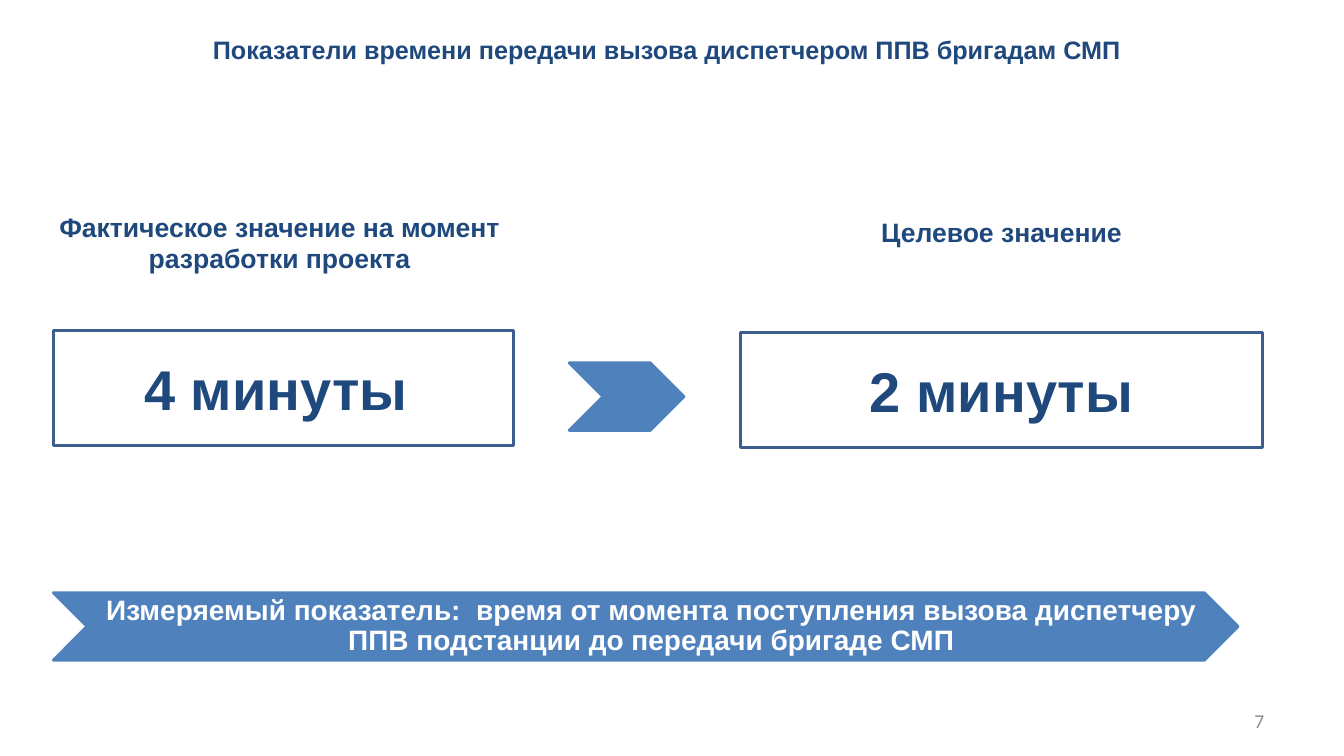
from pptx import Presentation, util as u
from pptx.dml.color import RGBColor
from pptx.enum import shapes, text

WIDTH, HEIGHT = u.Inches(13.34), u.Inches(7.5)
NAVY, BLUE, EDGE, WHITE, GREY = "1F497D", "4F81BD", "3A5F8C", "FFFFFF", "8C8C8C"
LABEL_HEIGHT, VALUE_HEIGHT = 17.73, 15.2


def color(code):
    """Turn a hex string into a colour."""
    return RGBColor.from_string(code)


def place(box):
    """Turn percentages of the slide into lengths."""
    left, top, width, height = box
    return [int(share * side / 100) for share, side in
            ((left, WIDTH), (top, HEIGHT), (width, WIDTH), (height, HEIGHT))]


def write(shape, words, size, code=NAVY, anchor=text.MSO_ANCHOR.MIDDLE,
          align=text.PP_ALIGN.CENTER, name="Arial", bold=True, spacing=1.0,
          margins=(0.1, 0.05, 0.1, 0.05)):
    """Fill a shape with one formatted paragraph."""
    frame = shape.text_frame
    sides = ("margin_left", "margin_top", "margin_right", "margin_bottom")
    settings = dict(zip(sides, map(u.Inches, margins)), word_wrap=True,
                    auto_size=text.MSO_AUTO_SIZE.NONE, vertical_anchor=anchor)
    para = frame.paragraphs[0]
    span = para.add_run()
    span.text = words
    span.font.color.rgb = color(code)
    formats = ((frame, settings),
               (para, {"alignment": align, "line_spacing": spacing}),
               (span.font, {"name": name, "size": u.Pt(size), "bold": bold}))
    for target, values in formats:
        for key, value in values.items():
            setattr(target, key, value)


def draw(page, kind, box, fill, line):
    """Draw a filled and outlined preset shape."""
    shape = page.shapes.add_shape(kind, *place(box))
    shape.shadow.inherit = False
    shape.fill.solid()
    shape.fill.fore_color.rgb = color(fill)
    shape.line.color.rgb = color(line)
    shape.line.width = u.Pt(2)
    return shape


def add_title(page, box, words):
    """Place the slide title."""
    title = page.shapes.title
    title.left, title.top, title.width, title.height = place(box)
    write(title, words, 18, anchor=text.MSO_ANCHOR.TOP)


def add_panel(page, box, label, value, bleed=0):
    """Place a label at the top of the box and a framed value at its bottom."""
    left, top, width, height = box
    caption = page.shapes.add_textbox(
        *place((left - bleed, top, width + bleed, LABEL_HEIGHT)))
    write(caption, label, 19)
    value_box = (left, top + height - VALUE_HEIGHT, width, VALUE_HEIGHT)
    frame = draw(page, shapes.MSO_SHAPE.RECTANGLE, value_box, WHITE, EDGE)
    write(frame, value, 40)


def add_chevron(page, box):
    """Draw a blue chevron."""
    draw(page, shapes.MSO_SHAPE.CHEVRON, box, BLUE, BLUE)


def add_banner(page, box, words):
    """Draw a wide chevron with text inset on every side."""
    add_chevron(page, box)
    left, top, width, height = box
    across, down = 2.25, 0.93
    inner = (left + across, top + down, width - 2 * across, height - 2 * down)
    write(page.shapes.add_textbox(*place(inner)), words, 20, WHITE,
          spacing=0.9, margins=(0.17, 0.06, 0.06, 0.06))


def add_page_number(page, box, number):
    """Place the page number."""
    write(page.shapes.add_textbox(*place(box)), number, 14, GREY,
          align=text.PP_ALIGN.RIGHT, name="Calibri", bold=False,
          margins=(0.12, 0.06, 0.12, 0.06))


def main():
    """Build the slide and save the deck."""
    deck = Presentation()
    deck.slide_width, deck.slide_height = WIDTH, HEIGHT
    page = deck.slides.add_slide(deck.slide_layouts[5])
    add_title(page, (14.09, 3.87, 71.06, 5.33),
              "Показатели времени передачи вызова диспетчером ППВ бригадам СМП")
    add_panel(page, (3.97, 23.2, 34.26, 35.73),
              "Фактическое значение на момент разработки проекта", "4 минуты ", bleed=0.6)
    add_chevron(page, (42.35, 48, 8.55, 8.93))
    add_panel(page, (55.1, 21.87, 38.83, 37.33), "Целевое значение", "2 минуты")
    add_banner(page, (3.97, 78.4, 88.16, 8.93),
               "Измеряемый показатель:  время от момента поступления вызова "
               "диспетчеру ППВ подстанции до передачи бригаде СМП")
    add_page_number(page, (71.66, 92.67, 23.31, 5.33), "7")
    deck.save("out.pptx")


if __name__ == "__main__":
    main()
